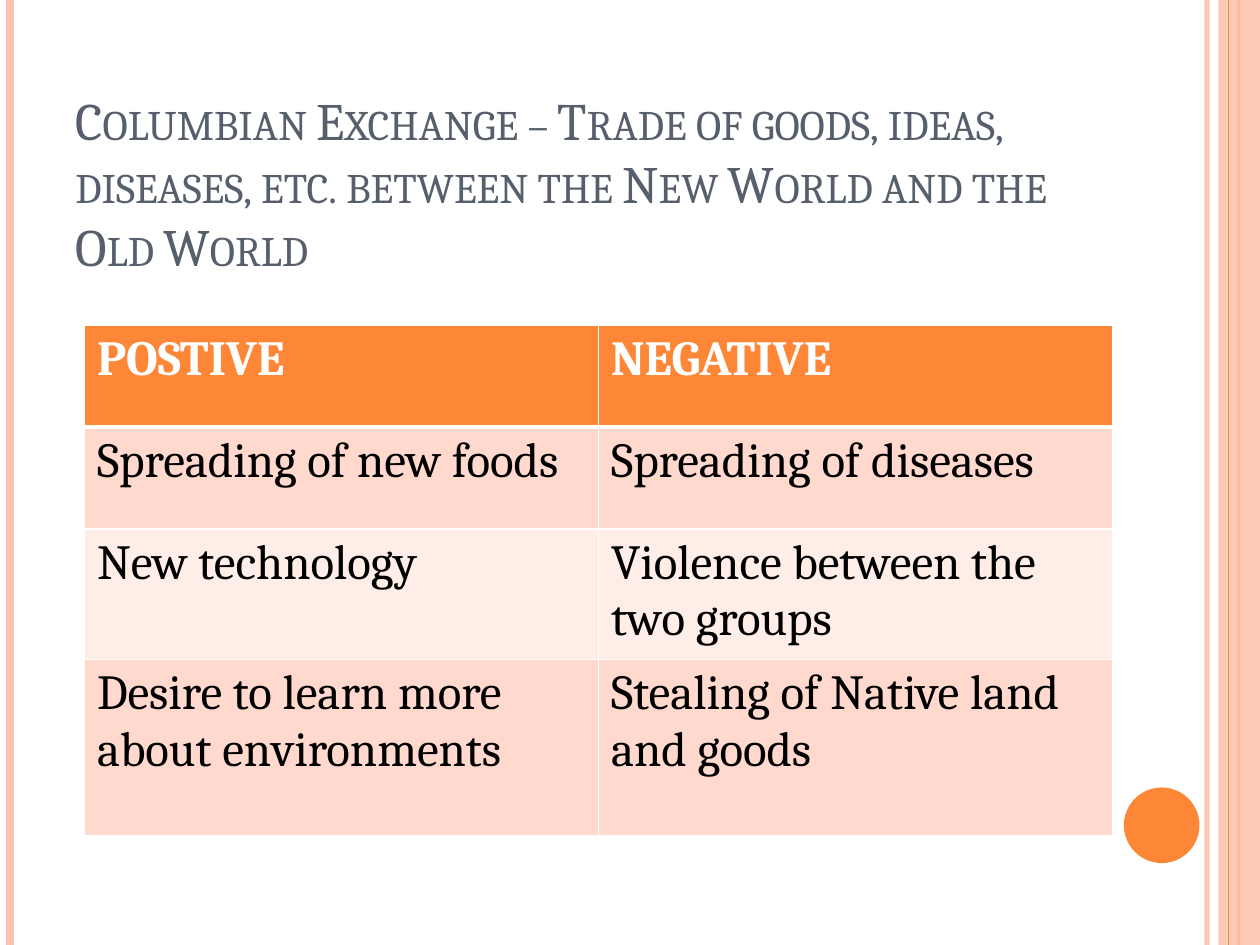
from lxml import etree
from pptx import Presentation
from pptx.dml.color import RGBColor
from pptx.enum.shapes import MSO_CONNECTOR, MSO_SHAPE
from pptx.enum.text import MSO_ANCHOR
from pptx.oxml.ns import qn
from pptx.util import Inches, Pt

STRAIGHT = MSO_CONNECTOR.STRAIGHT
RECTANGLE, OVAL = MSO_SHAPE.RECTANGLE, MSO_SHAPE.OVAL
BOTTOM = MSO_ANCHOR.BOTTOM

ORANGE = RGBColor(0xFE, 0x86, 0x37)
PEACH = RGBColor(0xFE, 0xC3, 0xAE)
SLATE = RGBColor(0x57, 0x5F, 0x6D)
BAND_DARK = RGBColor(0xFF, 0xD9, 0xCE)
BAND_LIGHT = RGBColor(0xFF, 0xED, 0xE8)
WHITE = RGBColor(0xFF, 0xFF, 0xFF)
BLACK = RGBColor(0, 0, 0)
FONT = "Cambria"

prs = Presentation()
prs.slide_width, prs.slide_height = Inches(10), Inches(7.5)
slide = prs.slides.add_slide(prs.slide_layouts[6])
shapes = slide.shapes


def set_alpha(fill_parent, percent):
    color = fill_parent.find(".//" + qn("a:srgbClr"))
    etree.SubElement(color, qn("a:alpha")).set("val", str(percent * 1000))


def add_stripe(x, color, width, opacity=100):
    stripe = shapes.add_connector(STRAIGHT, Inches(x), 0, Inches(x), prs.slide_height)
    stripe.line.color.rgb = color
    stripe.line.width = Pt(width)
    properties = stripe._element.spPr
    if opacity < 100:
        set_alpha(properties, opacity)
    etree.SubElement(properties, qn("a:effectLst"))


# Vertical stripes, side band and page dot
add_stripe(9.58, PEACH, 3, opacity=93)
add_stripe(0.08, PEACH, 4.5)
add_stripe(9.83, ORANGE, 1.5)

side_band = shapes.add_shape(RECTANGLE, Inches(9.67), 0, Inches(0.33), prs.slide_height)
page_dot = shapes.add_shape(OVAL, Inches(8.92), Inches(6.25), Inches(0.6), Inches(0.6))
for ornament, color in ((side_band, PEACH), (page_dot, ORANGE)):
    ornament.shadow.inherit = False
    ornament.fill.solid()
    ornament.fill.fore_color.rgb = color
    ornament.line.fill.background()
set_alpha(side_band._element.spPr, 87)
add_stripe(9.75, ORANGE, 0.75)

# Title in small capitals
title = shapes.add_textbox(Inches(0.5), Inches(0.58), Inches(8.17), Inches(1.67)).text_frame
title.word_wrap = True
title.vertical_anchor = BOTTOM
title.text = ("Columbian Exchange – Trade of goods, ideas, diseases, etc. "
              "between the New World and the Old World")
title_run = title.paragraphs[0].runs[0]
title_run.font.name = FONT
title_run.font.size = Pt(30)
title_run.font.color.rgb = SLATE
title_run._r.get_or_add_rPr().set("cap", "small")

# Table of effects
effects = [
    ("POSTIVE", "NEGATIVE"),
    ("Spreading of new foods", "Spreading of diseases"),
    ("New technology", "Violence between the two groups"),
    ("Desire to learn more about environments", "Stealing of Native land and goods"),
]
row_heights = [0.81, 0.81, 0.81, 1.4]
row_fills = [ORANGE, BAND_DARK, BAND_LIGHT, BAND_DARK]

table = shapes.add_table(len(effects), 2, Inches(0.67), Inches(2.58),
                         Inches(8.16), Inches(sum(row_heights))).table
for column in table.columns:
    column.width = Inches(4.08)

for r, entries in enumerate(effects):
    table.rows[r].height = Inches(row_heights[r])
    is_header = r == 0
    for c, entry in enumerate(entries):
        cell = table.cell(r, c)
        cell.text = entry
        font = cell.text_frame.paragraphs[0].runs[0].font
        font.name = FONT
        font.size = Pt(28)
        font.bold = is_header
        font.color.rgb = WHITE if is_header else BLACK

        # Borders go before the fill in the cell properties
        properties = cell._tc.get_or_add_tcPr()
        for side in ("L", "R", "T", "B"):
            heavy = (is_header and side == "B") or (r == 1 and side == "T")
            border = etree.SubElement(properties, qn("a:ln" + side))
            border.set("w", str(Pt(3 if heavy else 1)))
            border_fill = etree.SubElement(border, qn("a:solidFill"))
            etree.SubElement(border_fill, qn("a:srgbClr")).set("val", str(WHITE))
        cell.fill.solid()
        cell.fill.fore_color.rgb = row_fills[r]

prs.save("out.pptx")
